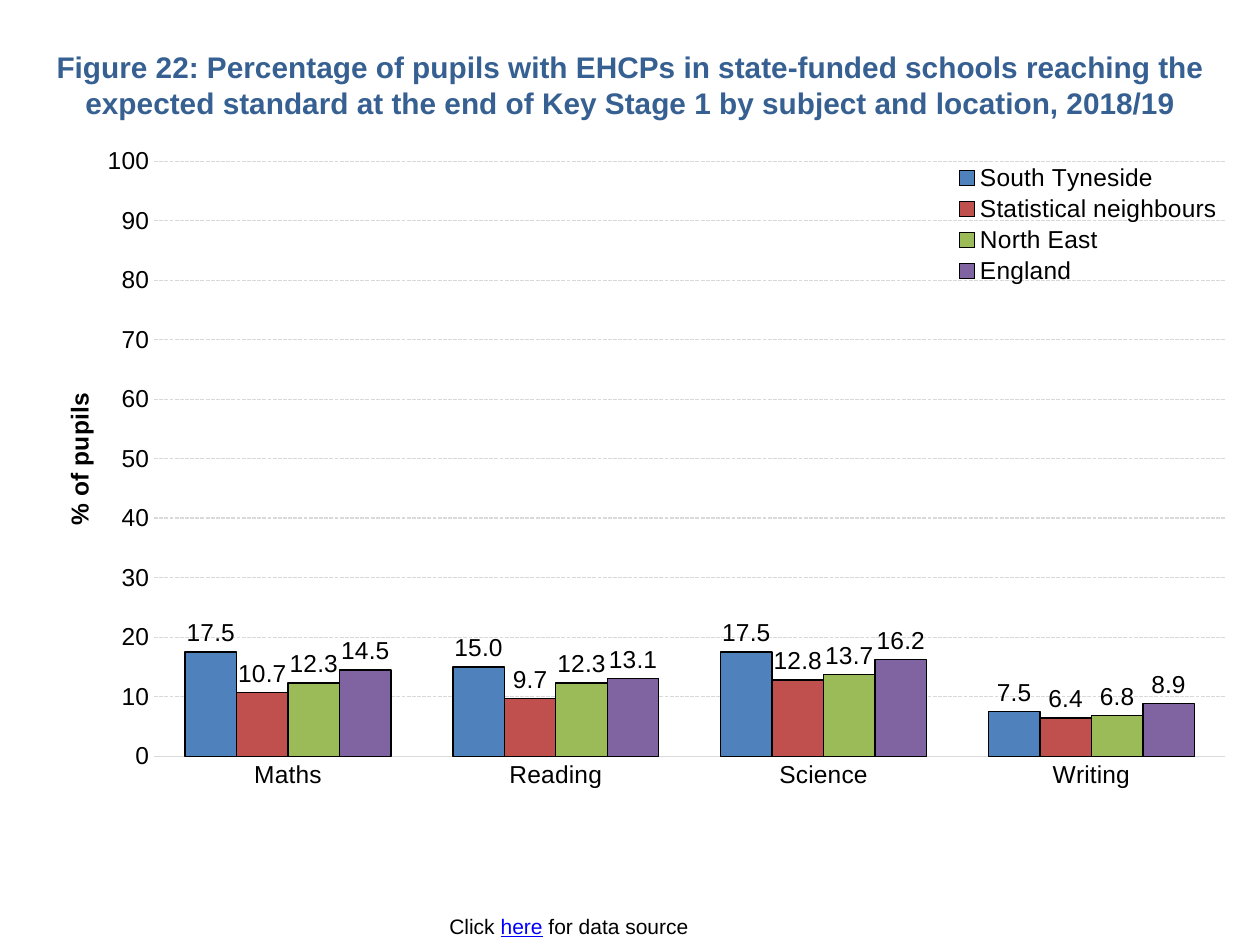
import pptx
import pptx.chart.data
import pptx.dml.color
import pptx.enum.chart
import pptx.enum.dml
import pptx.enum.text
import pptx.oxml
import pptx.oxml.ns
import pptx.util
from pptx.util import Inches


def color(hex_string):
    return pptx.dml.color.RGBColor.from_string(hex_string)


def make_layout(x, y, width=None, height=None, inner=False):
    """Manual chart layout in fractions of the chart area."""
    parts = '<c:layoutTarget val="inner"/>' if inner else ""
    parts += '<c:xMode val="edge"/><c:yMode val="edge"/>'
    for tag, value in (("x", x), ("y", y), ("w", width), ("h", height)):
        if value is not None:
            parts += f'<c:{tag} val="{value}"/>'
    return pptx.oxml.parse_xml(
        f'<c:layout {pptx.oxml.ns.nsdecls("c")}><c:manualLayout>{parts}</c:manualLayout></c:layout>')


presentation = pptx.Presentation()
presentation.slide_width, presentation.slide_height = Inches(10), Inches(7.5)
slide = presentation.slides.add_slide(presentation.slide_layouts[5])

# Title
heading = slide.shapes.title
heading.left, heading.top = Inches(0.28), Inches(0.25)
heading.width, heading.height = Inches(9.45), Inches(0.84)
heading.text_frame.text = (
    "Figure 22: Percentage of pupils with EHCPs in state-funded schools reaching the "
    "expected standard at the end of Key Stage 1 by subject and location, 2018/19")
heading.text_frame.auto_size = pptx.enum.text.MSO_AUTO_SIZE.NONE
heading.text_frame.vertical_anchor = pptx.enum.text.MSO_ANCHOR.MIDDLE
heading_line = heading.text_frame.paragraphs[0]
heading_line.alignment = pptx.enum.text.PP_ALIGN.CENTER
heading_line.font.name, heading_line.font.size = "Arial", pptx.util.Pt(17)
heading_line.font.bold = True
heading_line.font.color.rgb = color("376092")

# Chart data
locations = [
    ("South Tyneside", (17.5, 15.0, 17.5, 7.5), "4F81BD"),
    ("Statistical neighbours", (10.7, 9.7, 12.8, 6.4), "C0504D"),
    ("North East", (12.3, 12.3, 13.7, 6.8), "9BBB59"),
    ("England", (14.5, 13.1, 16.2, 8.9), "8064A2"),
]
results = pptx.chart.data.CategoryChartData(number_format="#,##0.0")
results.categories = ["Maths", "Reading", "Science", "Writing"]
for location, percentages, _ in locations:
    results.add_series(location, percentages)

# Chart
chart = slide.shapes.add_chart(
    pptx.enum.chart.XL_CHART_TYPE.COLUMN_CLUSTERED,
    Inches(0.28), Inches(1.17), Inches(9.45), Inches(5.31), results).chart
chart.has_title = False
chart.font.name, chart.font.size = "Arial", pptx.util.Pt(14)
chart.font.color.rgb = color("000000")
plot_area = chart.plots[0]
plot_area.gap_width, plot_area.overlap = 120, 0
plot_area.vary_by_categories = False

# Columns and their value labels
for columns, (_, _, fill) in zip(plot_area.series, locations):
    columns.format.fill.solid()
    columns.format.fill.fore_color.rgb = color(fill)
    columns.format.line.color.rgb = color("000000")
    columns.format.line.width = pptx.util.Pt(0.75)
    labels = columns.data_labels
    labels.show_value = True
    labels.position = pptx.enum.chart.XL_LABEL_POSITION.OUTSIDE_END
    labels.number_format, labels.number_format_is_linked = "#,##0.0", False
    labels.font.name, labels.font.size = "Arial", pptx.util.Pt(14)
    labels.font.color.rgb = color("000000")

# Axes
subjects, pupils = chart.category_axis, chart.value_axis
for axis in (subjects, pupils):
    axis.major_tick_mark = axis.minor_tick_mark = pptx.enum.chart.XL_TICK_MARK.NONE
pupils.minimum_scale, pupils.maximum_scale, pupils.major_unit = 0, 100, 10
pupils.tick_labels.number_format = "#,##0"
pupils.tick_labels.number_format_is_linked = False
pupils.format.line.fill.background()
pupils.has_major_gridlines = True
for line in (subjects.format.line, pupils.major_gridlines.format.line):
    line.color.rgb = color("D9D9D9")
    line.width = pptx.util.Pt(0.75)
pupils.major_gridlines.format.line.dash_style = pptx.enum.dml.MSO_LINE.SQUARE_DOT

pupils.axis_title.text_frame.text = "% of pupils"
axis_caption = pupils.axis_title.text_frame.paragraphs[0].font
axis_caption.name, axis_caption.size, axis_caption.bold = "Arial", pptx.util.Pt(14), True
axis_caption.color.rgb = color("000000")

# Legend inside the plot, top right
chart.has_legend = True
chart.legend.position = pptx.enum.chart.XL_LEGEND_POSITION.TOP
chart.legend.include_in_layout = True
chart.legend.font.name, chart.legend.font.size = "Arial", pptx.util.Pt(14)
chart.legend.font.color.rgb = color("000000")

# Manual placement of plot, axis title and legend
placements = [
    ("c:plotArea", make_layout(0.1, 0.02, 0.9, 0.89, inner=True), 0),
    ("c:valAx/c:title", make_layout(0.02, 0.36), 1),
    ("c:legend", make_layout(0.77, 0.02, 0.23, 0.19), 1),
]
for tag, placement, index in placements:
    part = chart.element.xpath(f".//{tag}")[0]
    for old_layout in part.xpath("./c:layout"):
        part.remove(old_layout)
    part.insert(index, placement)

# Source note
source_note = slide.shapes.add_textbox(
    Inches(3.44), Inches(7.2), Inches(2.15), Inches(0.3)).text_frame
source_note.word_wrap = True
source_note.vertical_anchor = pptx.enum.text.MSO_ANCHOR.MIDDLE
source_line = source_note.paragraphs[0]
source_line.alignment = pptx.enum.text.PP_ALIGN.CENTER
source_line.font.name, source_line.font.size = "Arial", pptx.util.Pt(12)
for words, ink in (("Click ", "000000"), ("here", "0000FF"), (" for data source", "000000")):
    run = source_line.add_run()
    run.text = words
    run.font.color.rgb = color(ink)
    run.font.underline = words == "here"

presentation.save("out.pptx")
